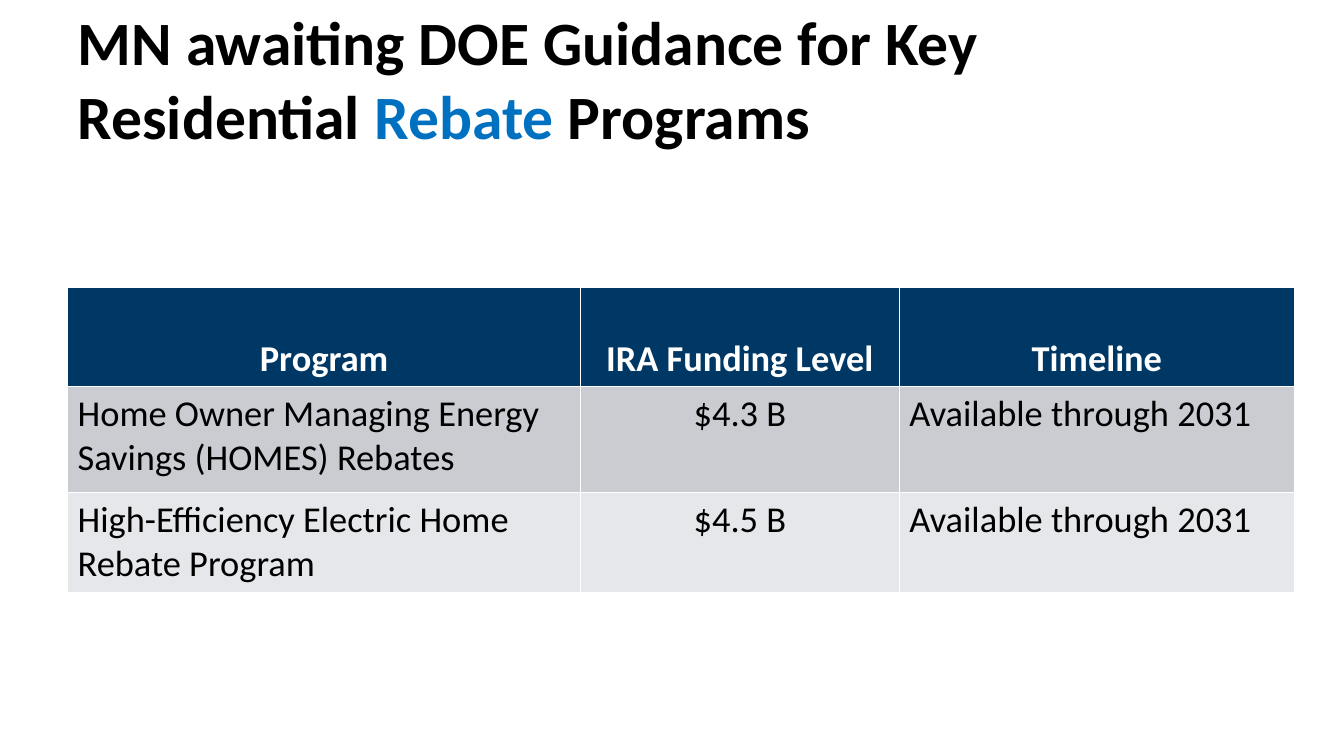
from pptx import Presentation
from pptx.dml.color import RGBColor as RGB
from pptx.enum.text import MSO_ANCHOR as Anchor, MSO_AUTO_SIZE as Fit, PP_ALIGN as Align
from pptx.util import Inches, Pt

BLACK = RGB(0x00, 0x00, 0x00)
WHITE = RGB(0xFF, 0xFF, 0xFF)
BLUE = RGB(0x00, 0x70, 0xC0)
NAVY = RGB(0x00, 0x38, 0x65)
GRAY = RGB(0xCA, 0xCC, 0xD2)
PALE = RGB(0xE6, 0xE7, 0xEA)


def write(para, text, size=26, color=BLACK, bold=False, align=Align.LEFT, space=1.0):
    para.alignment = align
    para.line_spacing = space
    run = para.add_run()
    run.text = text
    run.font.name = "Calibri"
    run.font.size = Pt(size)
    run.font.bold = bold
    run.font.color.rgb = color


deck = Presentation()
deck.slide_width = Inches(13.33)
deck.slide_height = Inches(7.5)
slide = deck.slides.add_slide(deck.slide_layouts[5])
left = Inches(0.67)

title = slide.shapes.title
title.left, title.top = left, 0
title.width, title.height = Inches(12), Inches(1.55)
frame = title.text_frame
frame.word_wrap = True
frame.auto_size = Fit.NONE
frame.vertical_anchor = Anchor.MIDDLE
frame.margin_left = frame.margin_right = Inches(0.1)
frame.margin_top = frame.margin_bottom = Inches(0.1)
for text, color in [
    ("MN awaiting DOE Guidance for Key Residential ", BLACK),
    ("Rebate", BLUE),
    (" Programs", BLACK),
]:
    write(frame.paragraphs[0], text, size=44, color=color, bold=True)

rows = [
    ("Program", "IRA Funding Level", "Timeline"),
    ("Home Owner Managing Energy Savings (HOMES) Rebates", "$4.3 B", "Available through 2031"),
    ("High-Efficiency Electric Home Rebate Program", "$4.5 B", "Available through 2031"),
]
widths = [5.09, 3.16, 3.92]
heights = [0.98, 1.05, 1]
fills = [NAVY, GRAY, PALE]

table = slide.shapes.add_table(
    len(rows), len(widths), left, Inches(2.85), Inches(sum(widths)), Inches(sum(heights))
).table
for col, width in zip(table.columns, widths):
    col.width = Inches(width)
for r, (row, high, fill) in enumerate(zip(rows, heights, fills)):
    table.rows[r].height = Inches(high)
    head = r == 0
    for c, text in enumerate(row):
        cell = table.cell(r, c)
        cell.fill.solid()
        cell.fill.fore_color.rgb = fill
        write(
            cell.text_frame.paragraphs[0],
            text,
            color=WHITE if head else BLACK,
            bold=head,
            align=Align.CENTER if head or c == 1 else Align.LEFT,
            space=2.0 if head else 1.0,
        )

deck.save("out.pptx")
